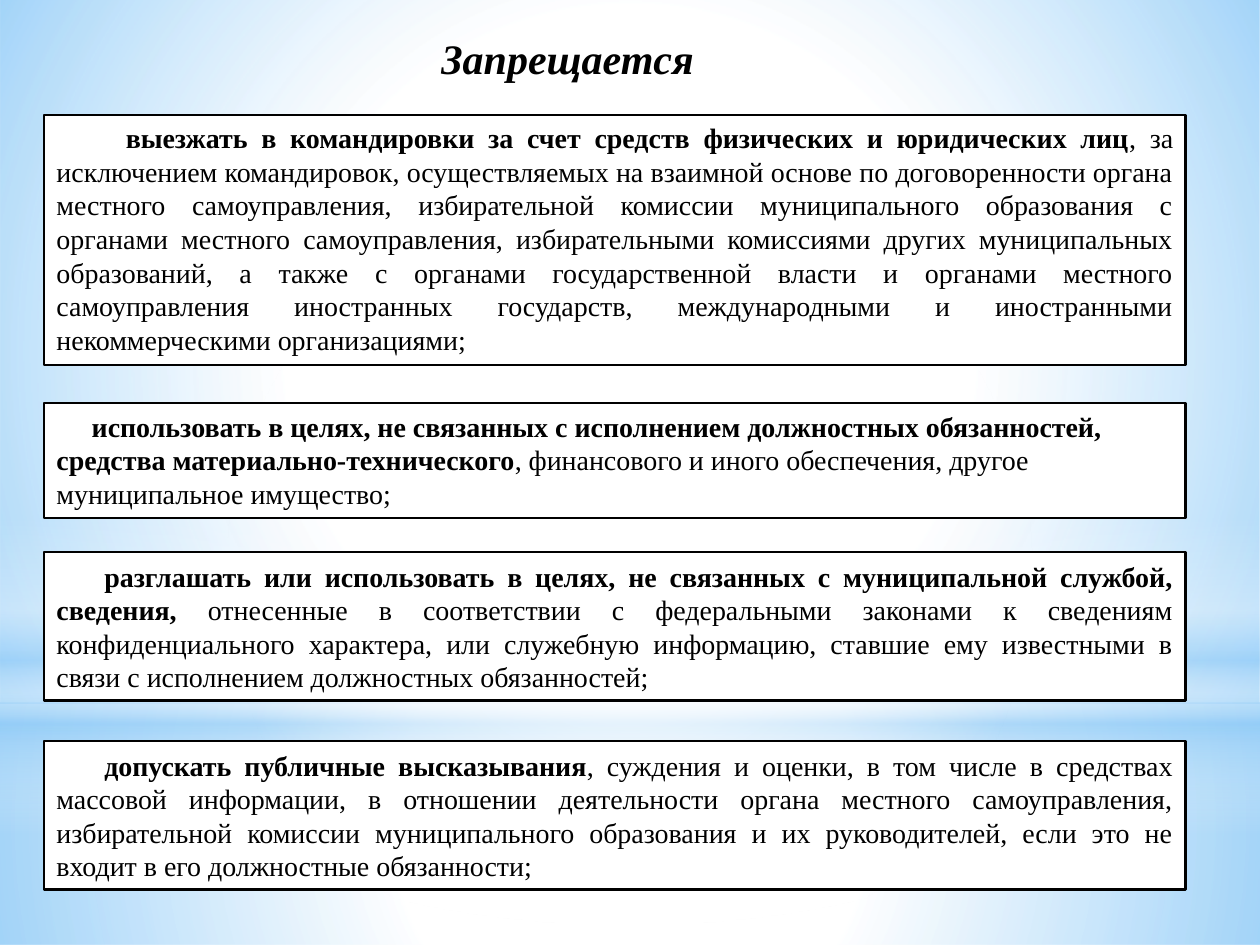
"""Build the slide listing what municipal employees are forbidden to do."""
from lxml.etree import SubElement
from pptx import Presentation
from pptx.dml.color import RGBColor
from pptx.enum.shapes import MSO_SHAPE
from pptx.enum.text import MSO_ANCHOR, MSO_AUTO_SIZE, PP_ALIGN
from pptx.oxml.ns import qn
from pptx.util import Inches, Pt


def color(value):
    return RGBColor.from_string(value)


def add_run(paragraph, text, size, bold, italic=False):
    run = paragraph.add_run()
    run.text = text
    run.font.name = "Times New Roman"
    run.font.size = Pt(size)
    run.font.bold = bold
    run.font.italic = italic
    run.font.color.rgb = color("000000")


presentation = Presentation()
presentation.slide_width = Inches(10)
presentation.slide_height = Inches(7.5)
slide = presentation.slides.add_slide(presentation.slide_layouts[6])
slide.background.fill.solid()
slide.background.fill.fore_color.rgb = color("FFFFFF")

WHITE, BLUE = "FFFFFF", "8BC9F7"
glows = [
    (MSO_SHAPE.RECTANGLE, 5.58, 1.92, True, [(0, WHITE, 91), (37, WHITE, 76), (100, BLUE, 79)]),
    (MSO_SHAPE.RECTANGLE, 0, 5.58, True, [(0, WHITE, 89), (48, WHITE, 62), (100, BLUE, 79)]),
    (MSO_SHAPE.RECTANGLE, 4.12, 2.5, False,
     [(0, WHITE, 0), (29, WHITE, 30), (45, BLUE, 40), (55, WHITE, 26), (65, BLUE, 60), (100, WHITE, 0)]),
    (MSO_SHAPE.OVAL, 1.75, 5.58, True, [(0, WHITE, 100), (56, WHITE, 0)]),
]
for kind, top, height, radial, stops in glows:
    shape = slide.shapes.add_shape(kind, 0, Inches(top), Inches(10), Inches(height))
    shape.shadow.inherit = False
    shape.line.fill.background()
    gradient = SubElement(shape._element.spPr, qn("a:gradFill"), rotWithShape="1")
    shape._element.spPr.find(qn("a:prstGeom")).addnext(gradient)
    stop_list = SubElement(gradient, qn("a:gsLst"))
    for position, value, opacity in stops:
        stop = SubElement(stop_list, qn("a:gs"), pos=str(position * 1000))
        stop_color = SubElement(stop, qn("a:srgbClr"), val=value)
        SubElement(stop_color, qn("a:alpha"), val=str(opacity * 1000))
    if radial:
        circle = SubElement(gradient, qn("a:path"), path="circle")
        SubElement(circle, qn("a:fillToRect"), l="50000", t="50000", r="50000", b="50000")
    else:
        SubElement(gradient, qn("a:lin"), ang="5400000", scaled="0")

title = slide.shapes.add_textbox(Inches(3.27), Inches(0.21), Inches(2.47), Inches(0.51))
title.text_frame.word_wrap = True
title.text_frame.auto_size = MSO_AUTO_SIZE.SHAPE_TO_FIT_TEXT
title.text_frame.paragraphs[0].alignment = PP_ALIGN.CENTER
add_run(title.text_frame.paragraphs[0], "Запрещается", 24, True, True)

prohibitions = [
    (0.91, 1.99, 0.55, PP_ALIGN.JUSTIFY, MSO_ANCHOR.TOP,
     "выезжать в командировки за счет средств физических и юридических лиц",
     ", за исключением командировок, осуществляемых на взаимной основе по договоренности "
     "органа местного самоуправления, избирательной комиссии муниципального образования "
     "с органами местного самоуправления, избирательными комиссиями других муниципальных "
     "образований, а также с органами государственной власти и органами местного "
     "самоуправления иностранных государств, международными и иностранными "
     "некоммерческими организациями;"),
    (3.2, 0.91, 0.28, PP_ALIGN.LEFT, MSO_ANCHOR.TOP,
     "использовать в целях, не связанных с исполнением должностных обязанностей, "
     "средства материально-технического",
     ", финансового и иного обеспечения, другое муниципальное имущество;"),
    (4.38, 1.18, 0.38, PP_ALIGN.JUSTIFY, MSO_ANCHOR.MIDDLE,
     "разглашать или использовать в целях, не связанных с муниципальной службой, сведения,",
     " отнесенные в соответствии с федеральными законами к сведениям конфиденциального "
     "характера, или служебную информацию, ставшие ему известными в связи с исполнением "
     "должностных обязанностей;"),
    (5.88, 1.18, 0.38, PP_ALIGN.JUSTIFY, MSO_ANCHOR.MIDDLE,
     "допускать публичные высказывания",
     ", суждения и оценки, в том числе в средствах массовой информации, в отношении "
     "деятельности органа местного самоуправления, избирательной комиссии муниципального "
     "образования и их руководителей, если это не входит в его должностные обязанности;"),
]
for top, height, indent, alignment, anchor, emphasis, details in prohibitions:
    shape = slide.shapes.add_shape(
        MSO_SHAPE.RECTANGLE, Inches(0.35), Inches(top), Inches(9.06), Inches(height))
    shape.shadow.inherit = False
    shape.fill.solid()
    shape.fill.fore_color.rgb = color(WHITE)
    shape.line.color.rgb = color("000000")
    shape.line.width = Pt(1.25)
    frame = shape.text_frame
    frame.word_wrap = True
    frame.auto_size = MSO_AUTO_SIZE.SHAPE_TO_FIT_TEXT
    frame.vertical_anchor = anchor
    paragraph = frame.paragraphs[0]
    paragraph.alignment = alignment
    properties = paragraph._p.get_or_add_pPr()
    properties.set("marL", "0")
    properties.set("indent", str(Inches(indent)))
    add_run(paragraph, emphasis, 16, True)
    add_run(paragraph, details, 16, False)

presentation.save("out.pptx")
